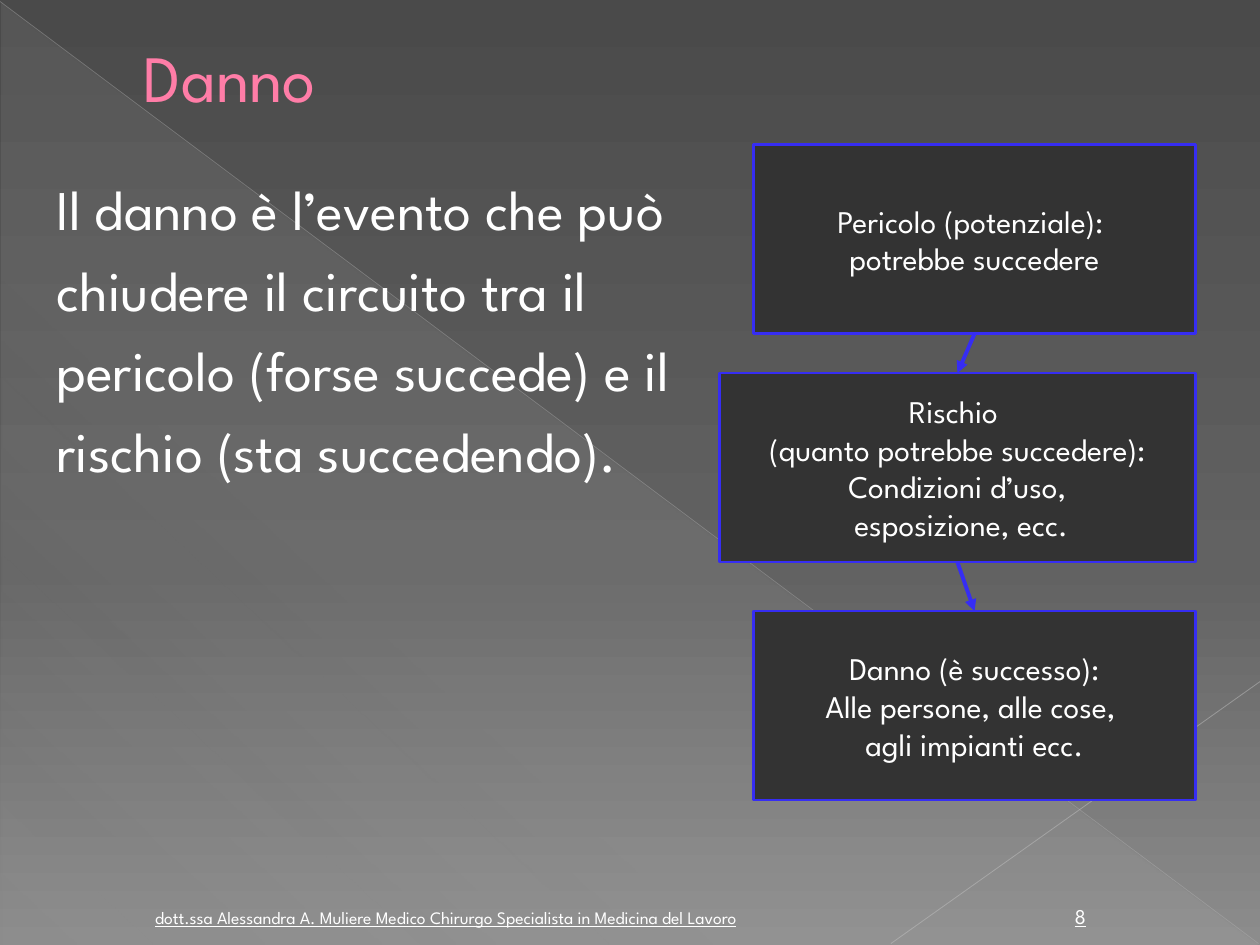
from lxml.etree import SubElement
from pptx import Presentation
from pptx.dml.color import RGBColor
from pptx.enum.shapes import MSO_CONNECTOR, MSO_SHAPE
from pptx.enum.text import MSO_ANCHOR, PP_ALIGN
from pptx.oxml.ns import qn
from pptx.util import Cm, Pt

LINE = MSO_CONNECTOR.STRAIGHT
BOX, WEDGE = MSO_SHAPE.FLOWCHART_PROCESS, MSO_SHAPE.RIGHT_TRIANGLE
TOP, MIDDLE, BOTTOM = MSO_ANCHOR.TOP, MSO_ANCHOR.MIDDLE, MSO_ANCHOR.BOTTOM
LEFT, CENTER, RIGHT = PP_ALIGN.LEFT, PP_ALIGN.CENTER, PP_ALIGN.RIGHT
COLORS = {
    "dark": "4A4A4A", "mid": "626262", "light": "8C8C8C", "veil": "D2D2D2",
    "ray": "BFBFBF", "beam": "C6C6C6", "pink": "FF7DA7", "white": "FFFFFF",
    "box": "333333", "blue": "362DF3",
}
FONT = "League Spartan"
EDGE, HIGH = 24.1, 3.81
STEPS = [
    (15.19, 2.92, "Pericolo (potenziale): \npotrebbe succedere"),
    (14.5, 7.52, "Rischio \n(quanto potrebbe succedere):\nCondizioni d’uso,\n esposizione, ecc."),
    (15.19, 12.32, "Danno (è successo):\nAlle persone, alle cose, \nagli impianti ecc."),
]


class Deck:
    """Holds the style and the current slide, and draws each kind of element."""

    def __init__(self):
        self.file = Presentation()
        self.file.slide_width, self.file.slide_height = Cm(25.4), Cm(19.05)
        self.slide = self.file.slides.add_slide(self.file.slide_layouts[6])
        self.shapes = self.slide.shapes

    def color(self, name):
        return RGBColor.from_string(COLORS[name])

    def fade(self, fill, host, angle, stops):
        fill.gradient()
        fill.gradient_angle = 360 - angle
        track = host.find(".//" + qn("a:gsLst"))
        for stop in list(track):
            track.remove(stop)
        for place, name, alpha in stops:
            stop = SubElement(track, qn("a:gs"), pos=str(place * 1000))
            tint = SubElement(stop, qn("a:srgbClr"), val=COLORS[name])
            SubElement(tint, qn("a:alpha"), val=str(alpha * 1000))

    def ground(self, angle, stops):
        self.fade(self.slide.background.fill, self.slide.element, angle, stops)

    def wedge(self, place, angle, stops):
        shape = self.shapes.add_shape(WEDGE, *map(Cm, place))
        shape.shadow.inherit = False
        shape.line.fill.background()
        self.fade(shape.fill, shape.element, angle, stops)

    def words(self, frame, text, size, color="white", align=LEFT, under=None, **para):
        part = frame.paragraphs[0]
        part.text = text
        for key, value in {"alignment": align, **para}.items():
            setattr(part, key, value)
        style = {"name": FONT, "size": Pt(size), "underline": under}
        for run in part.runs:
            for key, value in style.items():
                setattr(run.font, key, value)
            run.font.color.rgb = self.color(color)

    def text(self, place, text, size, frame, **style):
        area = self.shapes.add_textbox(*map(Cm, place)).text_frame
        for key, value in {"word_wrap": True, **frame}.items():
            setattr(area, key, value)
        self.words(area, text, size, **style)

    def box(self, left, top, text):
        shape = self.shapes.add_shape(BOX, *map(Cm, (left, top, EDGE - left, HIGH)))
        shape.shadow.inherit = False
        shape.fill.solid()
        shape.fill.fore_color.rgb = self.color("box")
        shape.line.color.rgb = self.color("blue")
        shape.line.width = Pt(1.5)
        shape.text_frame.word_wrap = False
        shape.text_frame.vertical_anchor = MIDDLE
        self.words(shape.text_frame, text, 18, align=CENTER)
        return shape

    def line(self, ends, color, width, alpha=100):
        line = self.shapes.add_connector(LINE, *map(Cm, ends))
        line.line.color.rgb = self.color(color)
        line.line.width = Pt(width)
        if alpha < 100:
            tint = line.element.find(".//" + qn("a:srgbClr"))
            SubElement(tint, qn("a:alpha"), val=str(alpha * 1000))
        SubElement(line.element.spPr, qn("a:effectLst"))
        return line

    def arrow(self, start, end):
        line = self.line((0, 0, 0, 0), "blue", 2.25)
        line.begin_connect(start, 2)
        line.end_connect(end, 0)
        SubElement(line.element.find(".//" + qn("a:ln")), qn("a:tailEnd"), type="triangle")


def main():
    deck = Deck()
    deck.ground(90, [(0, "dark", 100), (60, "mid", 100), (100, "light", 100)])
    deck.wedge((0.03, 0.05, 25.35, 19), 133,
               [(0, "veil", 10), (70, "veil", 8), (100, "veil", 1)])
    deck.line((0, 0.03, 25.37, 19.02), "ray", 0.39, 35)
    deck.line((25.4, 13.74, 17.96, 19.02), "beam", 0.47, 45)
    deck.text((1.3, 0.71, 23.39, 1.65), "Danno", 37.8,
              {"vertical_anchor": MIDDLE, "margin_left": Cm(1.6)}, color="pink")
    deck.text((0.89, 3.12, 13.21, 13.59),
              "Il danno è l’evento che può chiudere il circuito tra il pericolo "
              "(forse succede) e il rischio (sta succedendo).", 32,
              {"vertical_anchor": TOP}, line_spacing=1.2, space_before=Pt(6.4))
    base = {"vertical_anchor": BOTTOM}
    deck.text((1.27, 17.93, 13.82, 0.91),
              "dott.ssa Alessandra A. Muliere Medico Chirurgo Specialista "
              "in Medicina del Lavoro", 10, base, align=RIGHT, under=True)
    deck.text((21.08, 18.01, 1.4, 0.84), "8", 12, base, align=CENTER, under=True)
    boxes = [deck.box(*step) for step in STEPS]
    for start, end in zip(boxes, boxes[1:]):
        deck.arrow(start, end)
    deck.file.save("out.pptx")


if __name__ == "__main__":
    main()
